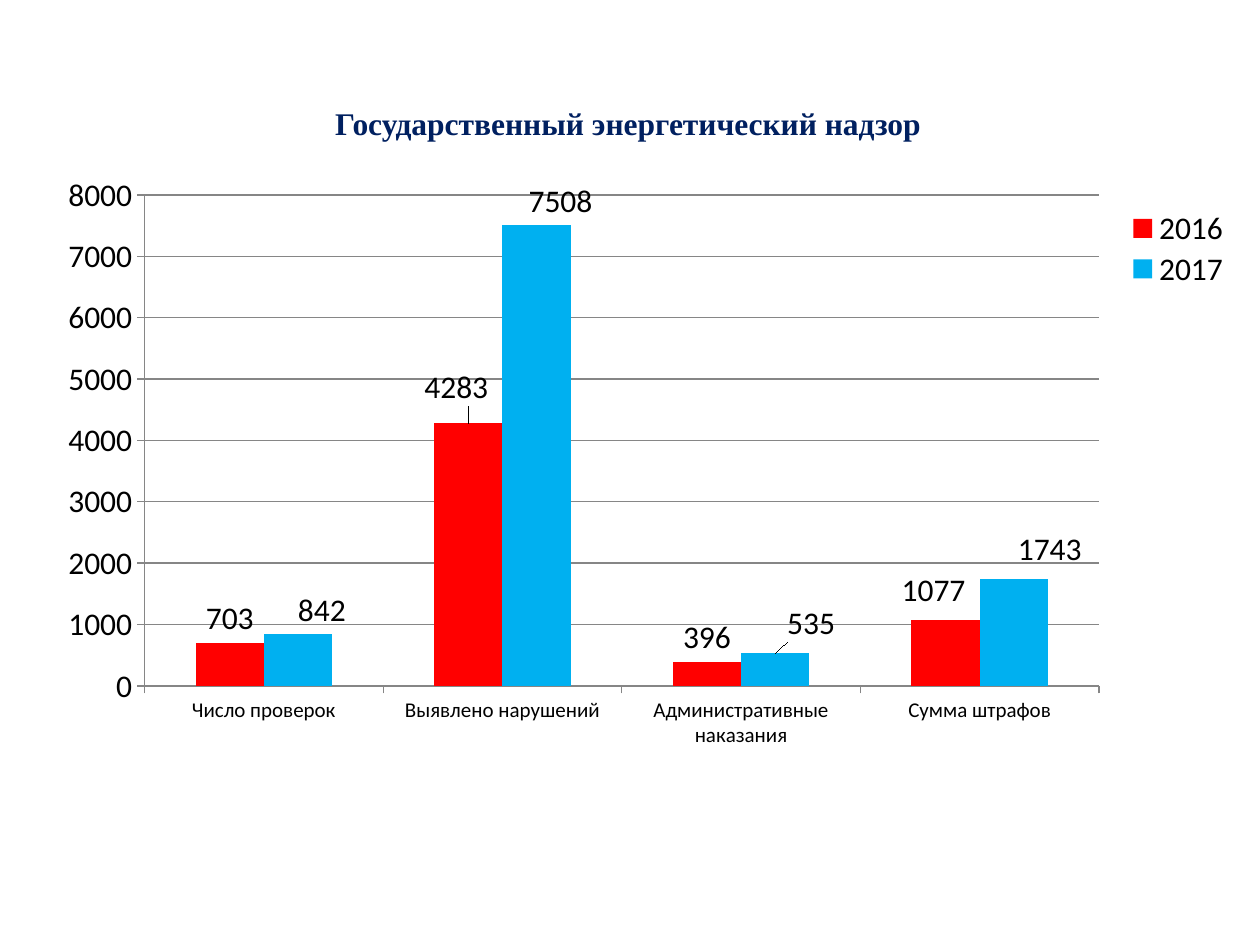
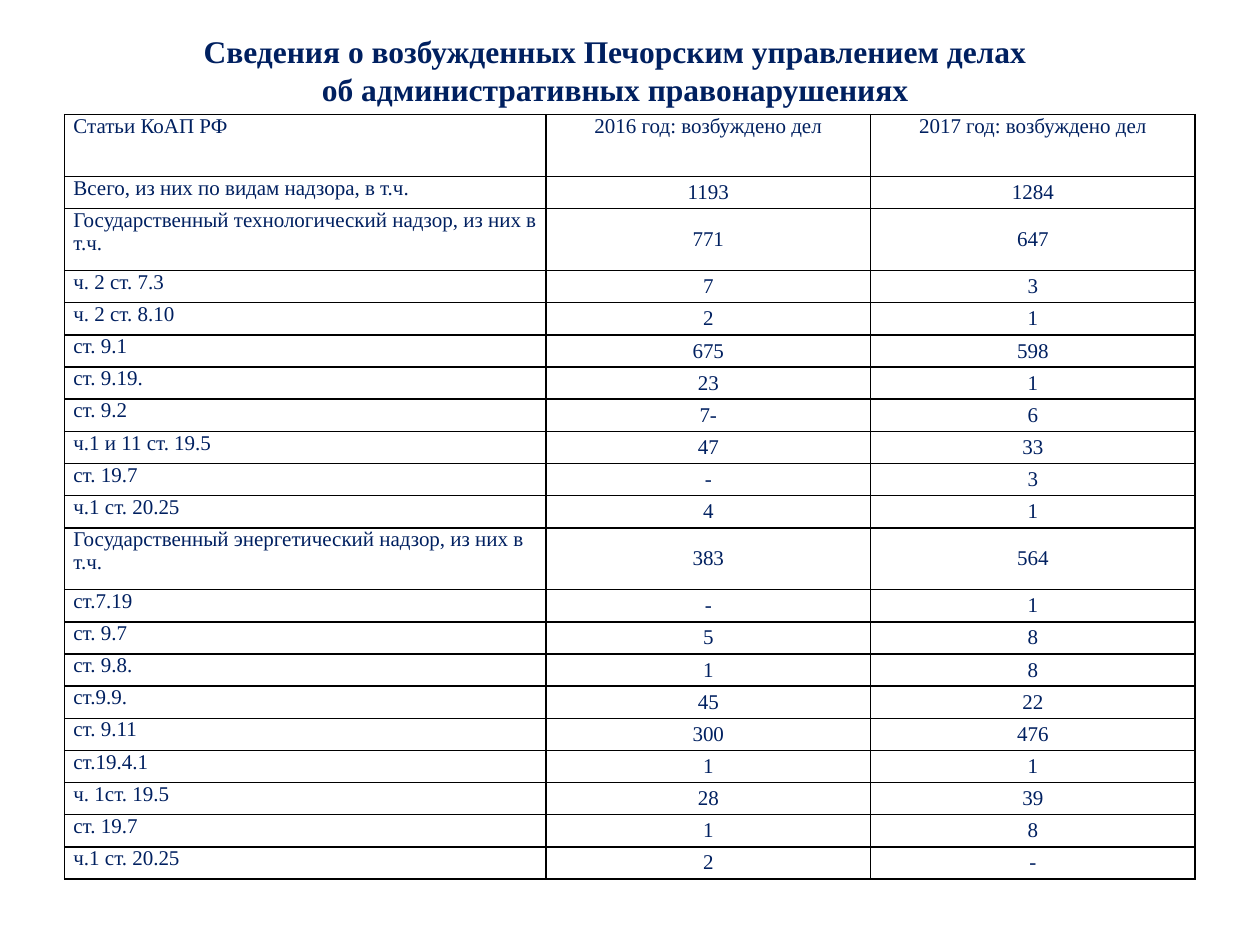
from dataclasses import dataclass

from lxml import etree
from pptx import Presentation
from pptx.chart.data import CategoryChartData
from pptx.dml.color import RGBColor
from pptx.enum.chart import XL_CHART_TYPE, XL_LABEL_POSITION, XL_LEGEND_POSITION, XL_TICK_MARK
from pptx.enum.text import MSO_ANCHOR, PP_ALIGN
from pptx.oxml import parse_xml
from pptx.oxml.ns import nsdecls, qn
from pptx.util import Pt

LEFT, CENTER = PP_ALIGN.LEFT, PP_ALIGN.CENTER
TOP, MIDDLE = MSO_ANCHOR.TOP, MSO_ANCHOR.MIDDLE
COLUMNS = XL_CHART_TYPE.COLUMN_CLUSTERED
LABEL_ABOVE = XL_LABEL_POSITION.OUTSIDE_END
LEGEND_RIGHT = XL_LEGEND_POSITION.RIGHT
TICK_OUT = XL_TICK_MARK.OUTSIDE


@dataclass(frozen=True)
class Theme:
    navy: str = "002060"
    black: str = "000000"
    axis: str = "868686"
    year_colors: tuple = ("FF0000", "00B0F0")
    text_font: str = "Times New Roman"
    chart_font: str = "Calibri"
    large: int = 18
    small: int = 12


THEME = Theme()

INSPECTION_STAGES = ["Число проверок", "Выявлено нарушений",
                     "Административные наказания", "Сумма штрафов"]
INSPECTIONS = {"2016": (703, 4283, 396, 1077), "2017": (842, 7508, 535, 1743)}
# Label shifts as fractions of the chart: {year: {category index: (x, y)}}
LABEL_SHIFTS = {
    "2016": {1: (-0.01, -0.02), 3: (-0.01, -0.01)},
    "2017": {0: (0.02, 0), 1: (0.02, 0), 2: (0.03, -0.01), 3: (0.03, -0.01)},
}

CASES = [
    ("Статьи КоАП РФ", "2016 год: возбуждено дел", "2017 год: возбуждено дел"),
    ("Всего, из них по видам надзора, в т.ч.", "1193", "1284"),
    ("Государственный технологический надзор, из них в т.ч.", "771", "647"),
    ("ч. 2 ст. 7.3", "7", "3"),
    ("ч. 2 ст. 8.10", "2", "1"),
    ("ст. 9.1", "675", "598"),
    ("ст. 9.19.", "23", "1"),
    ("ст. 9.2", "7-", "6"),
    ("ч.1 и 11 ст. 19.5", "47", "33"),
    ("ст. 19.7", "-", "3"),
    ("ч.1 ст. 20.25", "4", "1"),
    ("Государственный энергетический надзор, из них в т.ч.", "383", "564"),
    ("ст.7.19", "-", "1"),
    ("ст. 9.7", "5", "8"),
    ("ст. 9.8.", "1", "8"),
    ("ст.9.9.", "45", "22"),
    ("ст. 9.11", "300", "476"),
    ("ст.19.4.1", "1", "1"),
    ("ч. 1ст. 19.5", "28", "39"),
    ("ст. 19.7", "1", "8"),
    ("ч.1 ст. 20.25", "2", "-"),
]
TALL_ROWS = {0, 2, 11}


def rgb(color):
    return RGBColor.from_string(color)


def write(frame, text, size=THEME.small, bold=False, align=LEFT):
    """Fill a text frame, one paragraph for each line of text."""
    for number, line in enumerate(text.split("\n")):
        paragraph = frame.add_paragraph() if number else frame.paragraphs[0]
        paragraph.alignment = align
        run = paragraph.add_run()
        run.text = line
        run.font.name, run.font.size, run.font.bold = THEME.text_font, Pt(size), bold
        run.font.color.rgb = rgb(THEME.navy)


def add_title(slide, box, text, anchor=TOP):
    frame = slide.shapes.add_textbox(*map(Pt, box)).text_frame
    frame.word_wrap = True
    frame.vertical_anchor = anchor
    write(frame, text, size=THEME.large, bold=True, align=CENTER)


def manual_layout(**places):
    """Chart layout element from fractions and modes, in schema order."""
    parts = "".join(f'<c:{tag} val="{value}"/>' for tag, value in places.items())
    return parse_xml(f'<c:layout {nsdecls("c")}><c:manualLayout>{parts}'
                     '</c:manualLayout></c:layout>')


def set_layout(parent, index, layout):
    for old in parent.findall(qn("c:layout")):
        parent.remove(old)
    parent.insert(index, layout)


def style_axis(axis, size):
    axis.major_tick_mark = TICK_OUT
    axis.tick_labels.font.size = Pt(size)
    axis.format.line.color.rgb = rgb(THEME.axis)
    axis.format.line.width = Pt(0.75)


def style_series(series, color, shifts):
    series.format.fill.solid()
    series.format.fill.fore_color.rgb = rgb(color)
    labels = series.data_labels
    labels.show_value = True
    labels.position = LABEL_ABOVE
    # Labels moved away from their bars
    for index in shifts:
        series.points[index].data_label.position = LABEL_ABOVE
    for label, (x, y) in zip(series._element.findall(".//" + qn("c:dLbl")), shifts.values()):
        set_layout(label, 1, manual_layout(x=x, y=y))


def add_inspection_chart(slide, box):
    data = CategoryChartData()
    data.categories = INSPECTION_STAGES
    for year, values in INSPECTIONS.items():
        data.add_series(year, values)
    chart = slide.shapes.add_chart(COLUMNS, *map(Pt, box), data).chart
    chart.has_title = False
    chart.font.name, chart.font.size = THEME.chart_font, Pt(THEME.large)
    chart.font.color.rgb = rgb(THEME.black)

    # Axes and gridlines
    style_axis(chart.category_axis, THEME.small)
    style_axis(chart.value_axis, THEME.large)
    chart.value_axis.maximum_scale, chart.value_axis.major_unit = 8000, 1000
    chart.value_axis.minimum_scale = 0
    chart.value_axis.has_major_gridlines = True
    grid_line = chart.value_axis.major_gridlines.format.line
    grid_line.color.rgb, grid_line.width = rgb(THEME.axis), Pt(0.75)

    # Columns
    plot = chart.plots[0]
    plot.gap_width, plot.overlap, plot.vary_by_categories = 150, 0, False
    for series, color in zip(plot.series, THEME.year_colors):
        style_series(series, color, LABEL_SHIFTS[series.name])

    # Plot area and legend places
    chart.has_legend = True
    chart.legend.position = LEGEND_RIGHT
    chart.legend.include_in_layout = False
    set_layout(chart.legend._element, 1,
               manual_layout(xMode="edge", yMode="edge", x=0.9, y=0.07, w=0.09, h=0.14))
    set_layout(chart._chartSpace.chart.plotArea, 0,
               manual_layout(layoutTarget="inner", xMode="edge", yMode="edge",
                             x=0.084, y=0.05, w=0.795, h=0.825))


def add_borders(cell):
    properties = cell._tc.get_or_add_tcPr()
    for number, side in enumerate(("lnL", "lnR", "lnT", "lnB")):
        line = etree.Element(qn(f"a:{side}"), w=str(Pt(1)))
        fill = etree.SubElement(line, qn("a:solidFill"))
        etree.SubElement(fill, qn("a:srgbClr"), val=THEME.black)
        properties.insert(number, line)


def add_case_table(slide, box):
    left, top, width, height = box
    table = slide.shapes.add_table(len(CASES), 3, *map(Pt, box)).table
    table.first_row = table.horz_banding = False
    article_width, tall = 275, 35.4
    year_width = (width - article_width) / 2
    short = (height - tall * len(TALL_ROWS)) / (len(CASES) - len(TALL_ROWS))
    for column, column_width in zip(table.columns, (article_width, year_width, year_width)):
        column.width = Pt(column_width)

    for row, texts in enumerate(CASES):
        table.rows[row].height = Pt(tall if row in TALL_ROWS else short)
        for column, text in enumerate(texts):
            cell = table.cell(row, column)
            cell.margin_left = cell.margin_right = Pt(5)
            cell.margin_top = cell.margin_bottom = 0
            cell.vertical_anchor = MIDDLE if row and column else TOP
            cell.fill.background()
            write(cell.text_frame, text, align=CENTER if column else LEFT)
            add_borders(cell)


def build_energy_slide(slide):
    add_title(slide, (52, 57, 614, 26), "Государственный энергетический надзор", anchor=MIDDLE)
    add_inspection_chart(slide, (25, 94.5, 686, 340))


def build_cases_slide(slide):
    add_title(slide, (20, 15, 663, 51), "Сведения о возбужденных Печорским управлением делах\n"
                                        "об административных правонарушениях")
    add_case_table(slide, (37, 65.5, 646, 437))


def main():
    deck = Presentation()
    deck.slide_width, deck.slide_height = Pt(720), Pt(540)
    blank = deck.slide_layouts[6]
    for build in (build_energy_slide, build_cases_slide):
        build(deck.slides.add_slide(blank))
    deck.save("out.pptx")


if __name__ == "__main__":
    main()
